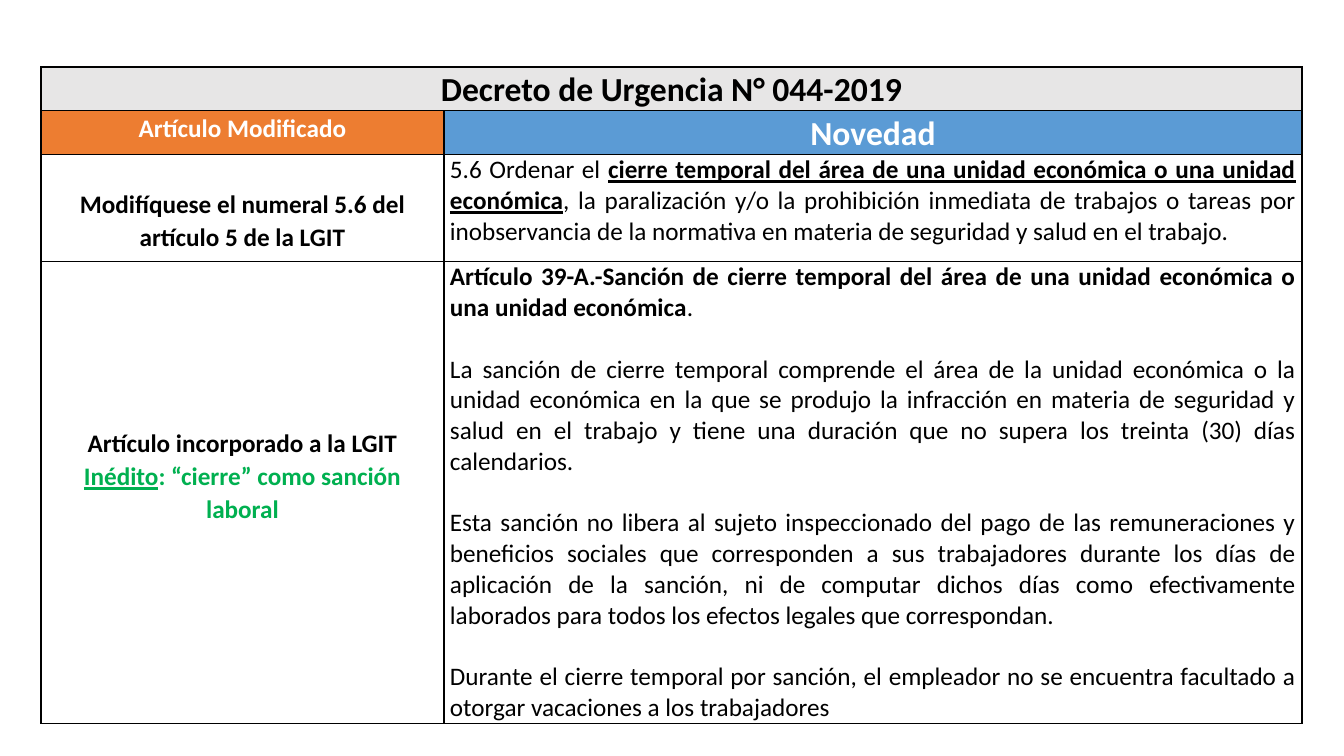
from lxml.etree import SubElement
from pptx import Presentation
from pptx.dml.color import RGBColor
from pptx.enum.text import PP_ALIGN
from pptx.oxml.ns import qn
from pptx.util import Pt

EMU_PER_PX = 914400 / 100.8
COLORS = {
    "black": "000000",
    "white": "FFFFFF",
    "gray": "E7E6E6",
    "orange": "ED7D31",
    "blue": "5B9BD5",
    "green": "00B050",
}
FONT = "Calibri"
CENTERED_SPACING = 1.07
COLUMN_WIDTHS = [403, 858]
ROW_HEIGHTS = [43, 44, 107, 461]
SIDE_MARGIN = 6
CENTERED_LINE = 33
BODY_GAP = Pt(22)

MODIFIED_ARTICLE = "Modifíquese el numeral 5.6 del artículo 5 de la LGIT"
NUMERAL_TEXT = [
    ("5.6 Ordenar el ", False, False),
    ("cierre temporal del área de una unidad económica o una unidad económica", True, True),
    (", la paralización y/o la prohibición inmediata de trabajos o tareas por "
     "inobservancia de la normativa en materia de seguridad y salud en el trabajo.", False, False),
]
SANCTION_TEXT = [
    [
        ("Artículo 39-A.-Sanción de cierre temporal del área de una unidad económica o "
         "una unidad económica", True, False),
        (".", False, False),
    ],
    [("La sanción de cierre temporal comprende el área de la unidad económica o la unidad "
      "económica en la que se produjo la infracción en materia de seguridad y salud en el "
      "trabajo y tiene una duración que no supera los treinta (30) días calendarios.", False, False)],
    [("Esta sanción no libera al sujeto inspeccionado del pago de las remuneraciones y "
      "beneficios sociales que corresponden a sus trabajadores durante los días de aplicación "
      "de la sanción, ni de computar dichos días como efectivamente laborados para todos los "
      "efectos legales que correspondan.", False, False)],
    [("Durante el cierre temporal por sanción, el empleador no se encuentra facultado a "
      "otorgar vacaciones a los trabajadores", False, False)],
]


def px(length):
    return round(length * EMU_PER_PX)


def rgb(name):
    return RGBColor.from_string(COLORS[name])


def format_cell(cell, fill):
    cell.margin_left = cell.margin_right = px(SIDE_MARGIN)
    cell.margin_top = cell.margin_bottom = 0
    cell.fill.solid()
    cell.fill.fore_color.rgb = rgb(fill)
    properties = cell._tc.get_or_add_tcPr()
    for position, side in enumerate(("lnL", "lnR", "lnT", "lnB")):
        line = SubElement(properties, qn(f"a:{side}"), w=str(Pt(1)))
        solid_fill = SubElement(line, qn("a:solidFill"))
        SubElement(solid_fill, qn("a:srgbClr"), val=COLORS["black"])
        properties.insert(position, line)


def write_paragraph(paragraph, runs, size=18, color="black", centered=False):
    paragraph.alignment = PP_ALIGN.CENTER if centered else PP_ALIGN.JUSTIFY
    paragraph.line_spacing = CENTERED_SPACING if centered else 1.0
    paragraph.font.name = FONT
    paragraph.font.size = Pt(size)
    paragraph.font.color.rgb = rgb(color)
    for text, bold, underline in runs:
        run = paragraph.add_run()
        run.text = text
        run.font.name = FONT
        run.font.size = Pt(size)
        run.font.color.rgb = rgb(color)
        run.font.bold = bold
        run.font.underline = underline


def write_heading(cell, text, size, color):
    write_paragraph(cell.text_frame.paragraphs[0], [(text, True, False)], size, color, True)


def fill_headings(table):
    table.cell(0, 0).merge(table.cell(0, 1))
    write_heading(table.cell(0, 0), "Decreto de Urgencia N° 044-2019", 24, "black")
    write_heading(table.cell(1, 0), "Artículo Modificado", 18, "white")
    write_heading(table.cell(1, 1), "Novedad", 24, "white")


def fill_numeral(table):
    article, novelty = table.cell(2, 0), table.cell(2, 1)
    article.margin_top = px(CENTERED_LINE)
    write_heading(article, MODIFIED_ARTICLE, 18, "black")
    write_paragraph(novelty.text_frame.paragraphs[0], NUMERAL_TEXT)


def fill_sanction(table):
    article, novelty = table.cell(3, 0), table.cell(3, 1)
    article.margin_top = px(5 * CENTERED_LINE)
    write_heading(article, "Artículo incorporado a la LGIT", 18, "black")
    unprecedented = [("Inédito", True, True), (": “cierre” como sanción laboral", True, False)]
    write_paragraph(article.text_frame.add_paragraph(), unprecedented, color="green", centered=True)
    frame = novelty.text_frame
    for index, runs in enumerate(SANCTION_TEXT):
        paragraph = frame.add_paragraph() if index else frame.paragraphs[0]
        write_paragraph(paragraph, runs)
        if index:
            paragraph.space_before = BODY_GAP


def add_decree_table(slide, left, top):
    frame = slide.shapes.add_table(
        len(ROW_HEIGHTS), len(COLUMN_WIDTHS), px(left), px(top),
        px(sum(COLUMN_WIDTHS)), px(sum(ROW_HEIGHTS)),
    )
    table = frame.table
    table.horz_banding = False
    for column, width in zip(table.columns, COLUMN_WIDTHS):
        column.width = px(width)
    for row, height in zip(table.rows, ROW_HEIGHTS):
        row.height = px(height)
    fills = [["gray", "gray"], ["orange", "blue"], ["white", "white"], ["white", "white"]]
    for row, row_fills in zip(table.rows, fills):
        for cell, fill in zip(row.cells, row_fills):
            format_cell(cell, fill)
    fill_headings(table)
    fill_numeral(table)
    fill_sanction(table)


def main():
    presentation = Presentation()
    presentation.slide_width = px(1344)
    presentation.slide_height = px(756)
    slide = presentation.slides.add_slide(presentation.slide_layouts[6])
    add_decree_table(slide, 41, 67)
    presentation.save("out.pptx")


if __name__ == "__main__":
    main()
